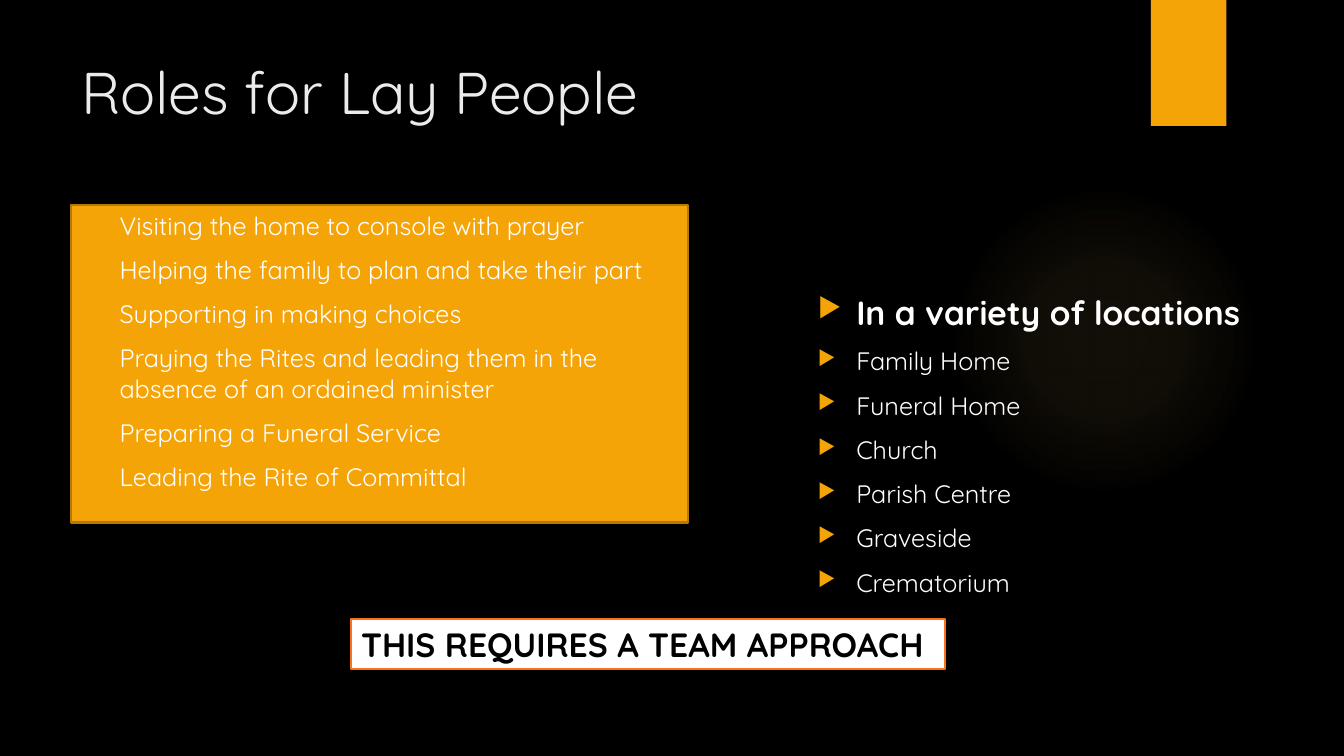
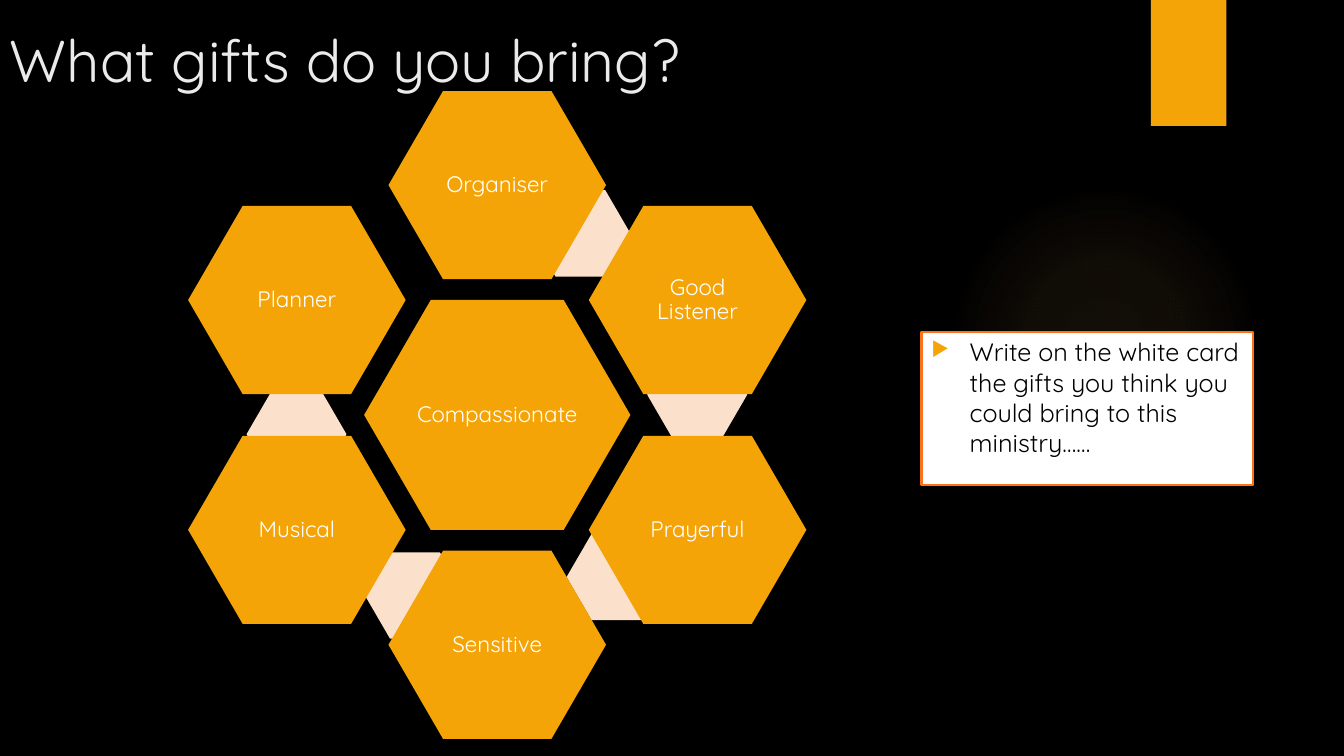
from dataclasses import dataclass
from typing import Optional

from lxml import etree
from pptx import Presentation, util as u
from pptx.dml.color import RGBColor
from pptx.enum import shapes, text
from pptx.oxml import ns, parse_xml

WIDE, HIGH = u.Inches(40 / 3), u.Inches(7.5)
COLS, ROWS = 160, 90
FONT = "Quicksand"
BLACK, WHITE, PALE = "000000", "FFFFFF", "EBEBEB"
GOLD, BROWN, ORANGE = "F5A408", "B57906", "FA731A"
PEACH, GLOW = "FBE0CC", "FAC96A"
RECT = shapes.MSO_SHAPE.RECTANGLE
OVAL = shapes.MSO_SHAPE.OVAL
HEXAGON = shapes.MSO_SHAPE.HEXAGON


@dataclass(frozen=True)
class Box:
    """An area in columns and rows of the slide grid."""
    x: float
    y: float
    w: float
    h: float

    def emu(self) -> tuple:
        col, row = WIDE / COLS, HIGH / ROWS
        return (round(self.x * col), round(self.y * row),
                round(self.w * col), round(self.h * row))


@dataclass(frozen=True)
class Item:
    text: str
    size: float = 18
    bold: bool = False
    ink: str = WHITE
    mark: bool = True


@dataclass(frozen=True)
class Ring:
    """Hexagons around a centre; spots count steps, links count grid units."""
    mid: tuple = (59.2, 49.4)
    step: tuple = (23.85, 13.68)
    core: tuple = (31.7, 27.4)
    cell: tuple = (25.9, 22.4)
    link: tuple = (11.9, 10.3)

    def area(self, dx: float, dy: float, size: tuple) -> Box:
        w, h = size
        return Box(self.mid[0] + dx - w / 2, self.mid[1] + dy - h / 2, w, h)


GIFTS = {
    "Organiser": (0, -2), "Good Listener": (1, -1), "Prayerful": (1, 1),
    "Sensitive": (0, 2), "Musical": (-1, 1), "Planner": (-1, -1),
}
LINKS = [(9.9, -21.6), (23.8, -2.4), (14.2, 19.3), (-9.8, 21.5), (-23.9, 2.3)]
ROLES = [
    "Visiting the home to console with prayer",
    "Helping the family to plan and take their part",
    "Supporting in making choices",
    "Praying the Rites and leading them in the absence of an ordained minister",
    "Preparing a Funeral Service",
    "Leading the Rite of Committal",
]
PLACES = ["Family Home", "Funeral Home", "Church", "Parish Centre",
          "Graveside", "Crematorium"]


def paint(target, tone: str) -> None:
    target.solid()
    target.fore_color.rgb = RGBColor.from_string(tone)


def shape(slide, kind, box: Box, tone: str, edge: Optional[str] = None):
    item = slide.shapes.add_shape(kind, *box.emu())
    item.shadow.inherit = False
    paint(item.fill, tone)
    if edge:
        paint(item.line.fill, edge)
        item.line.width = u.Pt(1.5)
    else:
        item.line.fill.background()
    return item


def bullet(para) -> None:
    prop = para._p.get_or_add_pPr()
    prop.set("marL", str(u.Inches(0.38)))
    prop.set("indent", str(-u.Inches(0.38)))
    tint = etree.SubElement(prop, ns.qn("a:buClr"))
    etree.SubElement(tint, ns.qn("a:srgbClr"), val=GOLD)
    etree.SubElement(prop, ns.qn("a:buSzPct"), val="80000")
    etree.SubElement(prop, ns.qn("a:buChar"), char="▶")


def write(item, lines: list, align=text.PP_ALIGN.LEFT,
          anchor=text.MSO_ANCHOR.TOP) -> None:
    frame = item.text_frame
    frame.word_wrap = True
    frame.vertical_anchor = anchor
    frame.text = "\n".join(line.text for line in lines)
    for num, (para, line) in enumerate(zip(frame.paragraphs, lines)):
        if line.mark:
            bullet(para)
        para.alignment = align
        if num:
            para.space_before = u.Pt(10)
        for run in para.runs:
            run.font.name = FONT
            run.font.size = u.Pt(line.size)
            run.font.bold = line.bold
            paint(run.font.fill, line.ink)


def label(slide, box: Box, lines: list) -> None:
    write(slide.shapes.add_textbox(*box.emu()), lines)


def glow(slide) -> None:
    """Draw a faint round light that fades out to its rim."""
    item = shape(slide, OVAL, Box(113, 22, 37, 37), GLOW)
    stops = "".join(
        f'<a:gs pos="{pos}000"><a:srgbClr val="{GLOW}">'
        f'<a:alpha val="{alpha}000"/></a:srgbClr></a:gs>'
        for pos, alpha in ((0, 7), (36, 6), (69, 0)))
    fade = parse_xml(
        f'<a:gradFill {ns.nsdecls("a")}><a:gsLst>{stops}</a:gsLst>'
        '<a:path path="circle"><a:fillToRect l="50000" t="50000" '
        'r="50000" b="50000"/></a:path></a:gradFill>')
    prop = item._element.spPr
    prop.replace(prop.find(ns.qn("a:solidFill")), fade)


def page(deck, title: str, box: Box):
    slide = deck.slides.add_slide(deck.slide_layouts[6])
    paint(slide.background.fill, BLACK)
    glow(slide)
    shape(slide, RECT, Box(137, 0, 9, 15), GOLD)
    label(slide, box, [Item(title, 42, ink=PALE, mark=False)])
    return slide


def cell(slide, box: Box, name: str = "") -> None:
    item = shape(slide, HEXAGON, box, GOLD if name else PEACH)
    item.adjustments[0] = 0.29
    if name:
        frame = item.text_frame
        frame.margin_left = frame.margin_right = u.Inches(0.02)
        frame.margin_top = frame.margin_bottom = u.Inches(0.02)
        write(item, [Item(name, 16, mark=False)],
              text.PP_ALIGN.CENTER, text.MSO_ANCHOR.MIDDLE)
        frame.paragraphs[0].line_spacing = 0.9


def roles(deck) -> None:
    slide = page(deck, "Roles for Lay People", Box(8.5, 6, 123.5, 18.4))
    panel = shape(slide, RECT, Box(8.5, 24.4, 73.4, 37.8), GOLD, BROWN)
    write(panel, [Item(role) for role in ROLES])
    head = Item("In a variety of locations", 24, True)
    label(slide, Box(96.2, 34.1, 57.7, 36.1),
          [head] + [Item(place) for place in PLACES])
    banner = shape(slide, RECT, Box(41.8, 73.7, 70.7, 6), WHITE, ORANGE)
    write(banner, [Item("THIS REQUIRES A TEAM APPROACH", 24, True, BLACK, False)])


def gifts(deck) -> None:
    slide = page(deck, "What gifts do you bring?", Box(0, 2.2, 123.5, 10))
    ring = Ring()
    cell(slide, ring.area(0, 0, ring.core), "Compassionate")
    for dx, dy in LINKS:
        cell(slide, ring.area(dx, dy, ring.link))
    for name, (col, row) in GIFTS.items():
        spot = ring.area(col * ring.step[0], row * ring.step[1], ring.cell)
        cell(slide, spot, name)
    card = shape(slide, RECT, Box(109.7, 39.5, 39.5, 18.2), WHITE, ORANGE)
    write(card, [Item("Write on the white card the gifts you think you could "
                      "bring to this ministry……", ink=BLACK)])


def main() -> None:
    deck = Presentation()
    deck.slide_width, deck.slide_height = WIDE, HIGH
    roles(deck)
    gifts(deck)
    deck.save("out.pptx")


if __name__ == "__main__":
    main()
